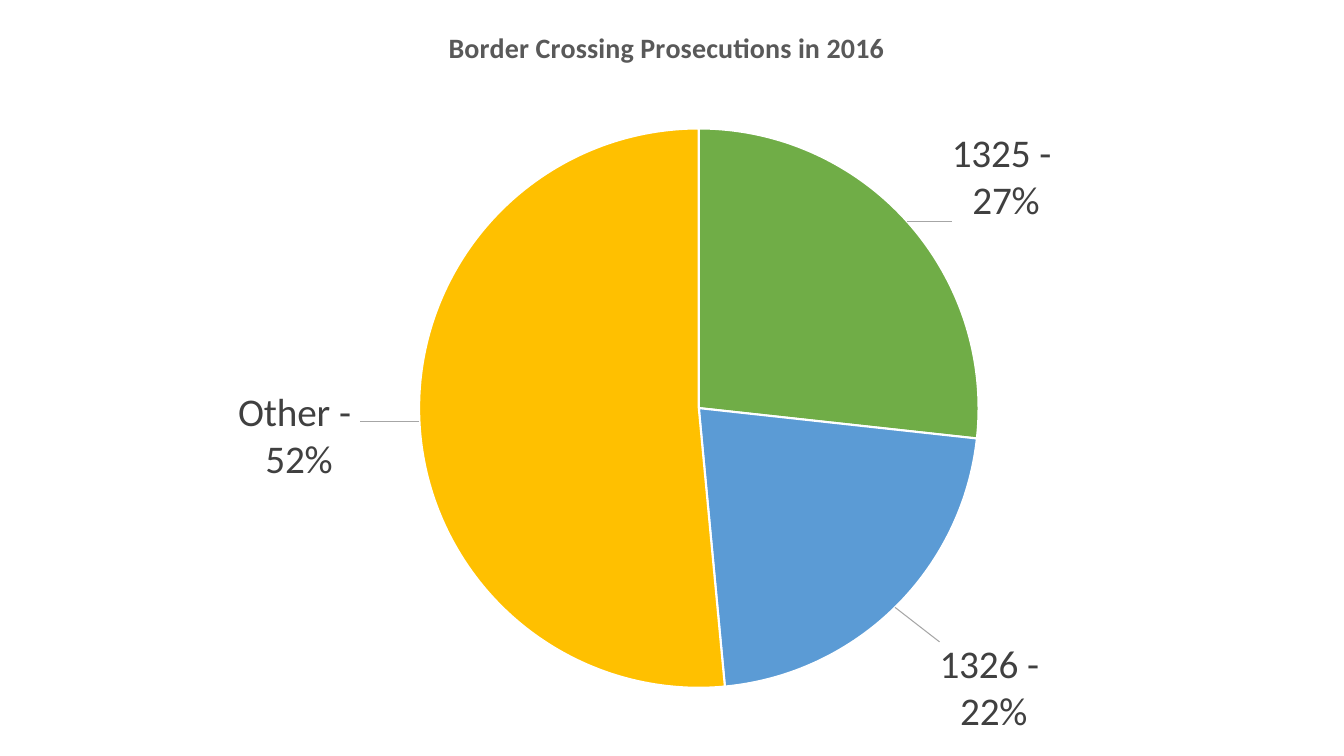
from dataclasses import dataclass

from lxml import etree
from pptx import Presentation
from pptx import util as u
from pptx.chart.data import CategoryChartData
from pptx.dml.color import RGBColor
from pptx.enum import chart as ce
from pptx.oxml.ns import qn


@dataclass(frozen=True)
class Theme:
    """Colours, font and type sizes of the slide."""
    font: str = "Calibri"
    title: str = "595959"
    label: str = "404040"
    lead: str = "A6A6A6"
    edge: str = "FFFFFF"
    head: int = 20
    body: int = 28
    base: int = 10


LOOK = Theme()
SLICES = [
    ("1325 - ", 0.27, "70AD47", (0.03, 0.01)),
    ("1326 - ", 0.22, "5B9BD5", (0.03, 0.04)),
    ("Other - ", 0.52, "FFC000", (-0.04, 0.02)),
]


def write(frame, words, size, color, bold=False):
    """Fill a text frame, one paragraph for each line."""
    for i, line in enumerate(words.split("\n")):
        para = frame.add_paragraph() if i else frame.paragraphs[0]
        run = para.add_run()
        run.text = line
        font = run.font
        font.name, font.size, font.bold = LOOK.font, u.Pt(size), bold
        font.color.rgb = RGBColor.from_string(color)


def place(node, index, **parts):
    """Give a chart part a manual layout in shares of the chart."""
    for old in node.findall(qn("c:layout")):
        node.remove(old)
    layout = etree.Element(qn("c:layout"))
    manual = etree.SubElement(layout, qn("c:manualLayout"))
    for tag, val in parts.items():
        etree.SubElement(manual, qn("c:" + tag)).set("val", str(val))
    node.insert(index, layout)


def lead(group):
    """Draw thin leader lines from slices to labels."""
    flag = group.find(qn("c:showLeaderLines"))
    if flag is None:
        flag = etree.SubElement(group, qn("c:showLeaderLines"))
    flag.set("val", "1")
    lines = etree.Element(qn("c:leaderLines"))
    props = etree.SubElement(lines, qn("c:spPr"))
    line = etree.SubElement(props, qn("a:ln"), w=str(u.Pt(0.75)))
    fill = etree.SubElement(line, qn("a:solidFill"))
    etree.SubElement(fill, qn("a:srgbClr"), val=LOOK.lead)
    flag.addnext(lines)


def pie(slide, left, top, width, height):
    """Place the titled pie chart in the given box."""
    data = CategoryChartData(number_format="0%")
    data.categories = ["1", "2", "3"]
    data.add_series("Series 1", [row[1] for row in SLICES])
    chart = slide.shapes.add_chart(
        ce.XL_CHART_TYPE.PIE, left, top, width, height, data).chart
    chart.font.name, chart.font.size = LOOK.font, u.Pt(LOOK.base)
    chart.has_legend = False
    chart.has_title = True
    title = chart.chart_title
    write(title.text_frame, "Border Crossing Prosecutions in 2016 ",
          LOOK.head, LOOK.title, bold=True)
    title.include_in_layout = False
    place(title.element, 1, xMode="edge", yMode="edge", x=0.33, y=0.03)

    plot = chart.plots[0]
    plot.vary_by_categories = True
    series = plot.series[0]
    labels = series.data_labels
    labels.show_value = True
    labels.number_format, labels.number_format_is_linked = "0%", False
    labels.position = ce.XL_LABEL_POSITION.OUTSIDE_END
    labels.font.size = u.Pt(LOOK.body)
    labels.font.color.rgb = RGBColor.from_string(LOOK.label)
    for i, (name, share, color, _) in enumerate(SLICES):
        point = series.points[i]
        point.format.fill.solid()
        point.format.fill.fore_color.rgb = RGBColor.from_string(color)
        point.format.line.color.rgb = RGBColor.from_string(LOOK.edge)
        point.format.line.width = u.Pt(1.5)
        write(point.data_label.text_frame, f"{name}\n{share:.0%}",
              LOOK.body, LOOK.label)
        point.data_label.position = ce.XL_LABEL_POSITION.OUTSIDE_END

    root = chart.element
    for node, row in zip(root.iter(qn("c:dLbl")), SLICES):
        place(node, 1, x=row[3][0], y=row[3][1])
    lead(next(root.iter(qn("c:dLbls"))))
    place(next(root.iter(qn("c:plotArea"))), 0, layoutTarget="inner",
          xMode="edge", yMode="edge", x=0.31, y=0.17, w=0.42, h=0.74)


def main():
    """Build and save the slide."""
    deck = Presentation()
    deck.slide_width, deck.slide_height = u.Inches(13.33), u.Inches(7.5)
    slide = deck.slides.add_slide(deck.slide_layouts[6])
    pie(slide, 0, 0, deck.slide_width, deck.slide_height)
    deck.save("out.pptx")


if __name__ == "__main__":
    main()
